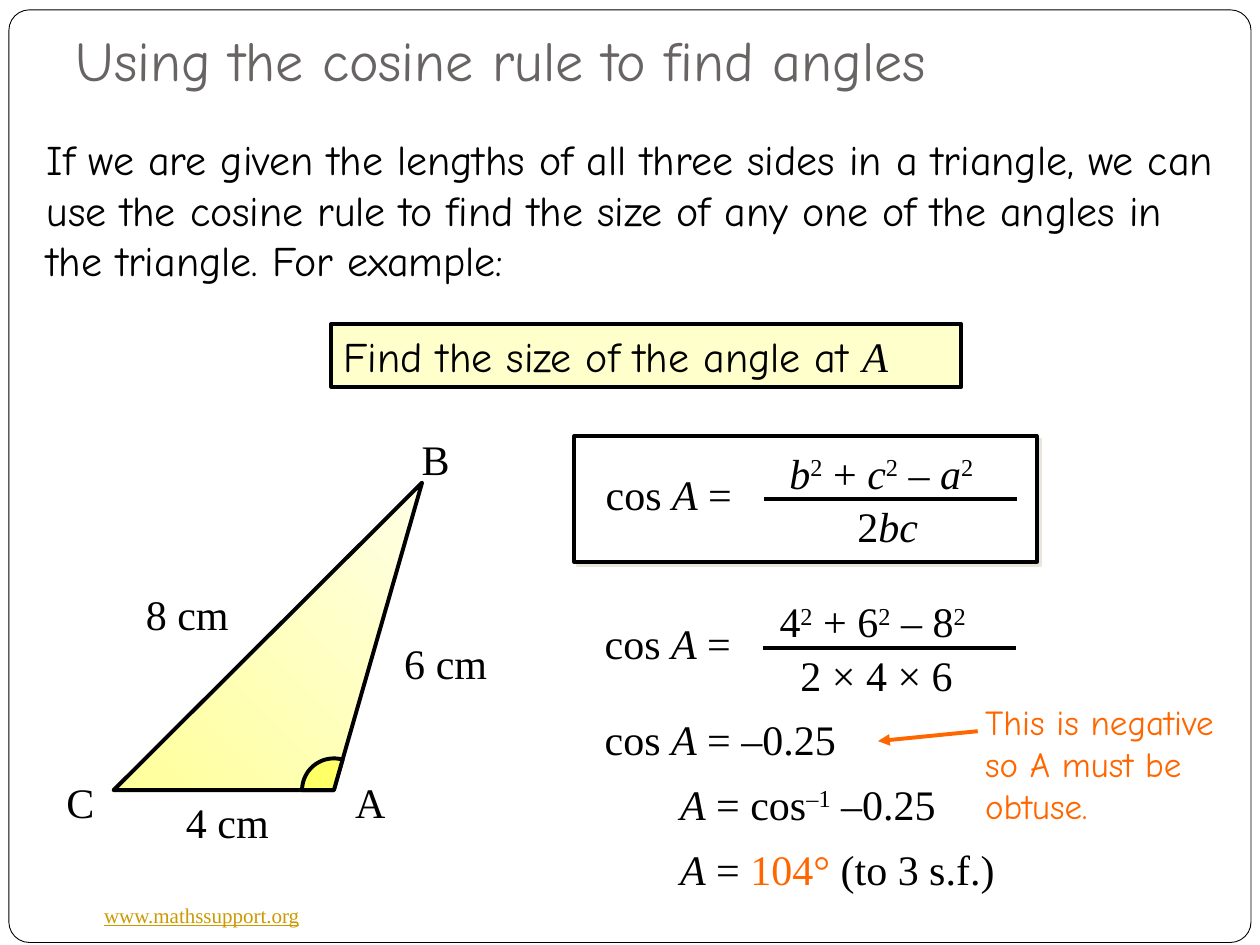
from math import atan2, cos, pi, sin

from lxml import etree
from pptx import Presentation
from pptx.dml.color import RGBColor
from pptx.enum.shapes import MSO_CONNECTOR, MSO_SHAPE
from pptx.enum.text import MSO_ANCHOR, PP_ALIGN
from pptx.oxml.ns import qn
from pptx.util import Cm, Pt

HAND, SERIF = "Comic Neue", "Times New Roman"
BLACK, WHITE, ORANGE = "000000", "FFFFFF", "FF6600"
LINE_HEIGHT = 1.28
COS_A = [("cos ", ""), ("A", "i"), (" =", "")]


def rgb(color):
    return RGBColor.from_string(color)


def write(frame, runs, size=24, font=SERIF, color=BLACK, wrap=True):
    """Fill a frame with (text, style) runs; styles: i italic, ^ raised, ! orange."""
    frame.word_wrap = wrap
    paragraph = frame.paragraphs[0]
    paragraph.alignment = PP_ALIGN.LEFT
    paragraph.font.size = Pt(size)
    paragraph.font.name = font
    paragraph.font.color.rgb = rgb(color)
    for text, style in runs:
        run = paragraph.add_run()
        run.text = text
        if style == "i":
            run.font.italic = True
            run.font.name = SERIF
        elif style == "^":
            run._r.get_or_add_rPr().set("baseline", "30000")
        elif style == "!":
            run.font.color.rgb = rgb(ORANGE)
    return paragraph


def add_text(slide, left, top, width, height, runs, **look):
    box = slide.shapes.add_textbox(Cm(left), Cm(top), Cm(width), Cm(height))
    write(box.text_frame, [(runs, "")] if isinstance(runs, str) else runs, **look)
    return box.text_frame


def outline(shape, width=2.25):
    shape.shadow.inherit = False
    shape.line.color.rgb = rgb(BLACK)
    shape.line.width = Pt(width)


def add_box(slide, left, top, width, height, fill, kind=MSO_SHAPE.RECTANGLE, line=2.25):
    box = slide.shapes.add_shape(kind, Cm(left), Cm(top), Cm(width), Cm(height))
    outline(box, line)
    box.fill.solid()
    box.fill.fore_color.rgb = rgb(fill)
    return box


def add_line(slide, x1, y1, x2, y2, color=BLACK):
    line = slide.shapes.add_connector(
        MSO_CONNECTOR.STRAIGHT, Cm(x1), Cm(y1), Cm(x2), Cm(y2))
    line.line.color.rgb = rgb(color)
    line.line.width = Pt(2.25)
    etree.SubElement(line._element.spPr, qn("a:effectLst"))
    return line


def add_polygon(slide, points):
    start, *rest = [(Cm(x), Cm(y)) for x, y in points]
    builder = slide.shapes.build_freeform(*start)
    builder.add_line_segments(rest, close=True)
    polygon = builder.convert_to_shape()
    outline(polygon)
    return polygon


def add_frame(slide, left, top, width, height):
    border = add_box(slide, left, top, width, height, WHITE,
                     MSO_SHAPE.ROUNDED_RECTANGLE, 0.5)
    border.adjustments[0] = 0.022
    address = add_text(slide, left + 1.67, top + 17.86, 4.5, 0.76,
                       "www.mathssupport.org", size=12, color="CC9900", wrap=False)
    address.paragraphs[0].font.underline = True


def add_heading(slide, left, top, width, height):
    title = add_text(slide, left, top, width, height,
                     "Using the cosine rule to find angles",
                     size=32, font=HAND, color="696464")
    title.vertical_anchor = MSO_ANCHOR.BOTTOM
    title.margin_bottom = Cm(0.25)


def add_question(slide, left, top, width, height):
    question = add_box(slide, left, top, width, height, "FFFFCC")
    write(question.text_frame,
          [("Find the size of the angle at ", ""), ("A", "i")], font=HAND)


def add_triangle(slide, left, top):
    corner_c, corner_a, corner_b = [
        (left + x, top + y) for x, y in ((1.2, 7.32), (5.64, 7.32), (7.42, 1.12))]
    triangle = add_polygon(slide, [corner_c, corner_a, corner_b])
    triangle.fill.gradient()
    triangle.fill.gradient_angle = 45
    for stop, color in zip(triangle.fill.gradient_stops, ("FFFF99", "FFFFE5")):
        stop.color.rgb = rgb(color)

    # The angle mark sweeps from side AC round to side AB.
    ax, ay = corner_a
    side_ab = atan2(ay - corner_b[1], corner_b[0] - ax)
    steps, radius = 24, 0.64
    angles = [pi + (side_ab - pi) * i / steps for i in range(steps + 1)]
    arc = [(ax + radius * cos(t), ay - radius * sin(t)) for t in angles]
    mark = add_polygon(slide, [corner_a] + arc)
    mark.fill.solid()
    mark.fill.fore_color.rgb = rgb("FFFF66")

    for label, x, y, width in (
            ("4 cm", 2.41, 7.32, 2.39), ("8 cm", 1.6, 3.12, 2.39),
            ("6 cm", 6.81, 4.11, 2.39), ("A", 5.82, 6.91, 1.14),
            ("B", 7.16, 0, 1.07), ("C", 0, 6.91, 1.02)):
        add_text(slide, left + x, top + y, width, LINE_HEIGHT, label)


def add_fraction(slide, left, top, numerator, numerator_width,
                 denominator, denominator_width):
    """Write cos A = a fraction, both parts centred on the bar."""
    bar_left, bar_width, bar_y = left + 3.44, 5.1, top + 1.17
    middle = bar_left + bar_width / 2
    add_text(slide, left, top + 0.43, 3.3, LINE_HEIGHT, COS_A)
    for runs, width, y in ((numerator, numerator_width, 0),
                           (denominator, denominator_width, 1.07)):
        add_text(slide, middle - width / 2, top + y, width, LINE_HEIGHT, runs)
    add_line(slide, bar_left, bar_y, bar_left + bar_width, bar_y)


def add_rule(slide, left, top, width, height):
    box = add_box(slide, left, top, width, height, WHITE)
    effects = box._element.spPr.find(qn("a:effectLst"))
    shadow = etree.SubElement(effects, qn("a:outerShdw"),
                              dist=str(Pt(2.8)), dir="2700000", algn="ctr")
    etree.SubElement(shadow, qn("a:srgbClr"), val="E9E5DC")
    add_fraction(slide, left + 0.38, top + 0.1,
                 [("b", "i"), ("2", "^"), (" + ", ""), ("c", "i"), ("2", "^"),
                  (" – ", ""), ("a", "i"), ("2", "^")], 4.57,
                 [("2", ""), ("bc", "i")], 1.83)


def add_working(slide, left, top):
    add_fraction(slide, left, top,
                 [("4", ""), ("2", "^"), (" + 6", ""), ("2", "^"),
                  (" – 8", ""), ("2", "^")], 4.93,
                 "2 × 4 × 6", 4.09)
    steps = (
        (0, COS_A + [(" –0.25", "")]),
        (1.52, [("A", "i"), (" = cos", ""), ("–1", "^"), (" –0.25", "")]),
        (1.52, [("A", "i"), (" = ", ""), ("104°", "!"), (" (to 3 s.f.)", "")]))
    for row, (indent, runs) in enumerate(steps):
        add_text(slide, left + indent, top + 2.36 + 1.31 * row, 7.8, LINE_HEIGHT, runs)


def add_remark(slide, left, top, width, height):
    arrow = add_line(slide, left + 0.1, top + 0.74, left - 1.91, top + 0.94, ORANGE)
    etree.SubElement(arrow.line._get_or_add_ln(), qn("a:tailEnd"), type="triangle")
    add_text(slide, left, top, width, height, "This is negative so A must be obtuse.",
             size=20, font=HAND, color=ORANGE)


def main():
    deck = Presentation()
    deck.slide_width, deck.slide_height = Cm(25.4), Cm(19.05)
    slide = deck.slides.add_slide(deck.slide_layouts[6])
    add_frame(slide, 0.18, 0.2, 25.04, 18.8)
    add_heading(slide, 1.27, 0.51, 22.86, 1.6)
    add_text(slide, 0.69, 2.57, 24.38, 3.33,
             "If we are given the lengths of all three sides in a triangle, we can "
             "use the cosine rule to find the size of any one of the angles in the "
             "triangle. For example:", font=HAND)
    add_question(slide, 6.68, 6.53, 12.7, 1.27)
    add_triangle(slide, 1.09, 8.61)
    add_rule(slide, 11.58, 8.79, 9.32, 2.54)
    add_working(slide, 11.94, 11.89)
    add_remark(slide, 19.61, 14, 5.79, 2.82)
    deck.save("out.pptx")


if __name__ == "__main__":
    main()
